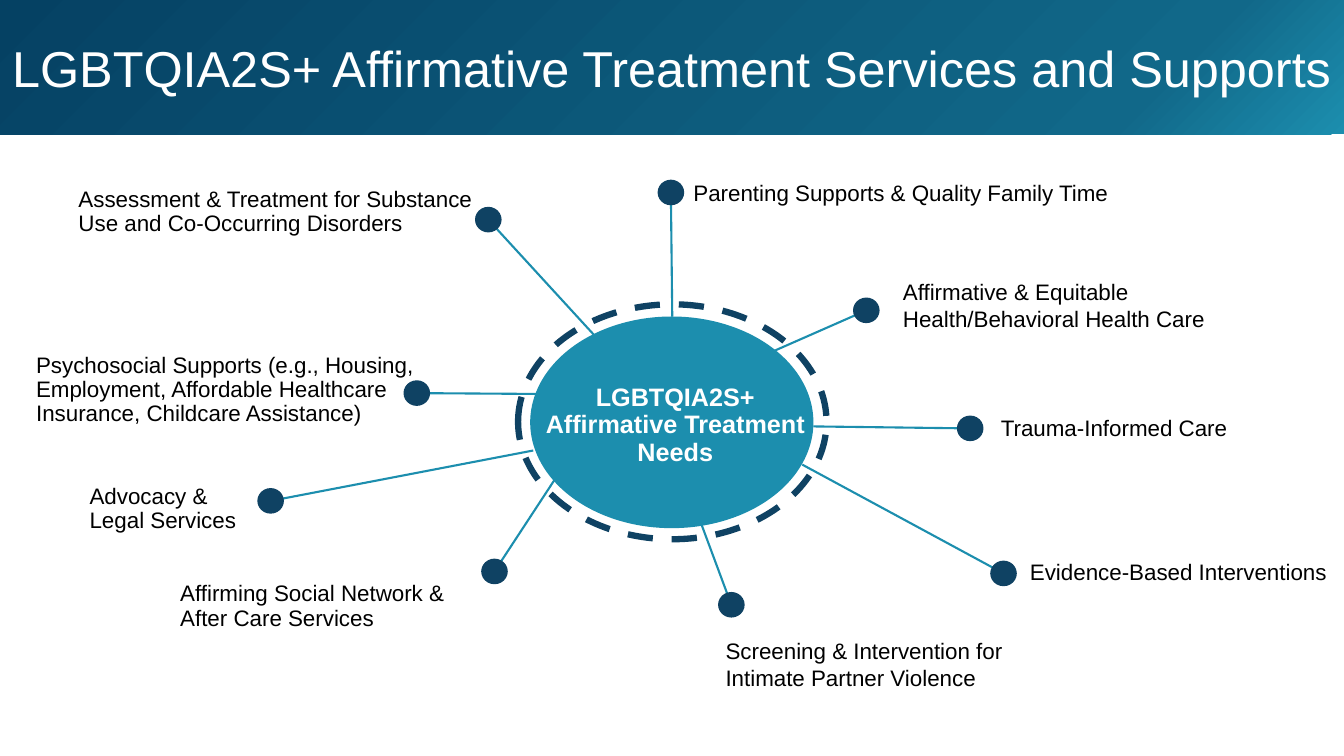
from collections import namedtuple

from lxml import etree
from pptx import Presentation
from pptx.dml.color import RGBColor
from pptx.enum.dml import MSO_LINE
from pptx.enum.shapes import MSO_CONNECTOR, MSO_SHAPE
from pptx.enum.text import MSO_ANCHOR, PP_ALIGN
from pptx.oxml.ns import qn
from pptx.util import Pt

COLORS = {
    "teal": "1C8EAE",
    "blue": "116889",
    "deep": "054163",
    "navy": "0F4263",
    "white": "FFFFFF",
    "black": "000000",
}
FONT = "Arial"
DOT_WIDTH, DOT_HEIGHT = 18, 17.3

# Lengths in points, relative to the diagram area; spokes run from hub to dot centre
Need = namedtuple("Need", "lines hub dot label anchor line_spacing")
TOP, MIDDLE = MSO_ANCHOR.TOP, MSO_ANCHOR.MIDDLE
RIGHT_NEEDS = [
    Need(["Affirmative & Equitable", "Health/Behavioral Health Care"],
         (551.5, 155.3), (618.8, 125.7), (637.9, 110.6, 312.5, 22.3), MIDDLE, 1),
    Need(["Trauma-Informed Care"],
         (581, 208.6), (693, 210), (707.8, 187, 198.7, 44.6), MIDDLE, 1),
    Need(["Evidence-Based Interventions"],
         (573.1, 235.9), (716.8, 313.6), (728.6, 295.7, 231.1, 35.3), MIDDLE, 0.9),
    Need(["Screening & Intervention for Intimate Partner Violence"],
         (497.5, 269), (522.4, 336), (511.2, 355.4, 254.2, 49), TOP, 1),
]
LEFT_NEEDS = [
    Need(["Parenting Supports & Quality Family Time"],
         (480.2, 130.1), (479.2, 41.5), (488.2, 24.2, 337.7, 36.7), MIDDLE, 0.9),
    Need(["Assessment & Treatment for Substance Use and Co-Occurring Disorders"],
         (424.8, 143.8), (348.8, 60.9), (49, 35, 305.3, 41.8), MIDDLE, 0.9),
    Need(["Psychosocial Supports (e.g., Housing, Employment, Affordable Healthcare "
          "Insurance, Childcare Assistance)"],
         (397.4, 185.5), (297.7, 184.8), (18.7, 153.1, 297.4, 35.3), TOP, 0.9),
    Need(["Advocacy & Legal Services"],
         (380.9, 225.8), (193.3, 261.8), (56.9, 246.7, 126, 39.6), TOP, 0.9),
    Need(["Affirming Social Network & After Care Services"],
         (407.5, 229.4), (353.2, 312.2), (121.7, 316.6, 234.7, 36.7), TOP, 0.9),
]


def color(name):
    return RGBColor.from_string(COLORS[name])


def within(area, box):
    left, top, width, height = box
    return area[0] + left, area[1] + top, width, height


def write_text(shape, lines, size, color_name, anchor=TOP, align=PP_ALIGN.LEFT,
               line_spacing=1, bold=False):
    frame = shape.text_frame
    frame.word_wrap = True
    frame.vertical_anchor = anchor
    for index, line in enumerate(lines):
        paragraph = frame.add_paragraph() if index else frame.paragraphs[0]
        paragraph.alignment = align
        paragraph.line_spacing = line_spacing
        run = paragraph.add_run()
        run.text = line
        run.font.name = FONT
        run.font.size = Pt(size)
        run.font.bold = bold
        run.font.color.rgb = color(color_name)


def add_text(slide, box, lines, size, color_name, **style):
    shape = slide.shapes.add_textbox(*map(Pt, box))
    write_text(shape, lines, size, color_name, **style)


def add_circle(slide, box, fill=None, line=None, line_width=1):
    shape = slide.shapes.add_shape(MSO_SHAPE.FLOWCHART_CONNECTOR, *map(Pt, box))
    shape.shadow.inherit = False
    if fill:
        shape.fill.solid()
        shape.fill.fore_color.rgb = color(fill)
    else:
        shape.fill.background()
    if line:
        shape.line.color.rgb = color(line)
        shape.line.width = Pt(line_width)
    else:
        shape.line.fill.background()
    return shape


def add_spoke(slide, area, need):
    points = [area[0] + need.hub[0], area[1] + need.hub[1],
              area[0] + need.dot[0], area[1] + need.dot[1]]
    spoke = slide.shapes.add_connector(MSO_CONNECTOR.STRAIGHT, *map(Pt, points))
    spoke.line.color.rgb = color("teal")
    spoke.line.width = Pt(1.5)
    etree.SubElement(spoke._element.spPr, qn("a:effectLst"))


def add_need(slide, area, need):
    dot = (need.dot[0] - DOT_WIDTH / 2, need.dot[1] - DOT_HEIGHT / 2,
           DOT_WIDTH, DOT_HEIGHT)
    add_circle(slide, within(area, dot), fill="navy", line="navy")
    add_text(slide, within(area, need.label), need.lines, 16, "black",
             anchor=need.anchor, line_spacing=need.line_spacing)


def set_gradient(shape, stops, angle):
    shape.fill.gradient()
    gradient = shape._element.spPr.find(qn("a:gradFill"))
    stop_list = gradient.find(qn("a:gsLst"))
    for stop in list(stop_list):
        stop_list.remove(stop)
    for percent, name in stops:
        stop = etree.SubElement(stop_list, qn("a:gs"), pos=str(percent * 1000))
        etree.SubElement(stop, qn("a:srgbClr"), val=COLORS[name])
    direction = gradient.find(qn("a:lin"))
    direction.set("ang", str(angle * 60000))
    direction.set("scaled", "0")


def add_title_band(slide, box):
    band = slide.shapes.add_shape(MSO_SHAPE.RECTANGLE, *map(Pt, box))
    band.shadow.inherit = False
    band.line.fill.background()
    set_gradient(band, [(0, "teal"), (16, "blue"), (100, "deep")], 225)
    write_text(band, ["LGBTQIA2S+ Affirmative Treatment Services and Supports"],
               36, "white", anchor=MIDDLE, align=PP_ALIGN.CENTER)


def add_hub(slide, area):
    add_circle(slide, within(area, (378.7, 130.1, 202.3, 151.2)), fill="teal")
    ring = add_circle(slide, within(area, (370.1, 121.4, 220.3, 167.8)),
                      line="navy", line_width=4.5)
    ring.line.dash_style = MSO_LINE.DASH
    add_text(slide, within(area, (374.4, 175.4, 216, 19.4)),
             ["LGBTQIA2S+ Affirmative Treatment Needs"], 18, "white",
             align=PP_ALIGN.CENTER, line_spacing=0.9, bold=True)


def add_diagram(slide, area):
    # Right spokes pass behind the ring, left ones over it
    for need in RIGHT_NEEDS:
        add_spoke(slide, area, need)
    add_hub(slide, area)
    for need in LEFT_NEEDS:
        add_spoke(slide, area, need)
    # Dots and labels
    for need in RIGHT_NEEDS + LEFT_NEEDS:
        add_need(slide, area, need)


def main():
    presentation = Presentation()
    presentation.slide_width = Pt(960)
    presentation.slide_height = Pt(540)
    slide = presentation.slides.add_slide(presentation.slide_layouts[6])
    add_title_band(slide, (0, 0, 960, 96))
    add_diagram(slide, (0, 96, 960, 444))
    presentation.save("out.pptx")


if __name__ == "__main__":
    main()
